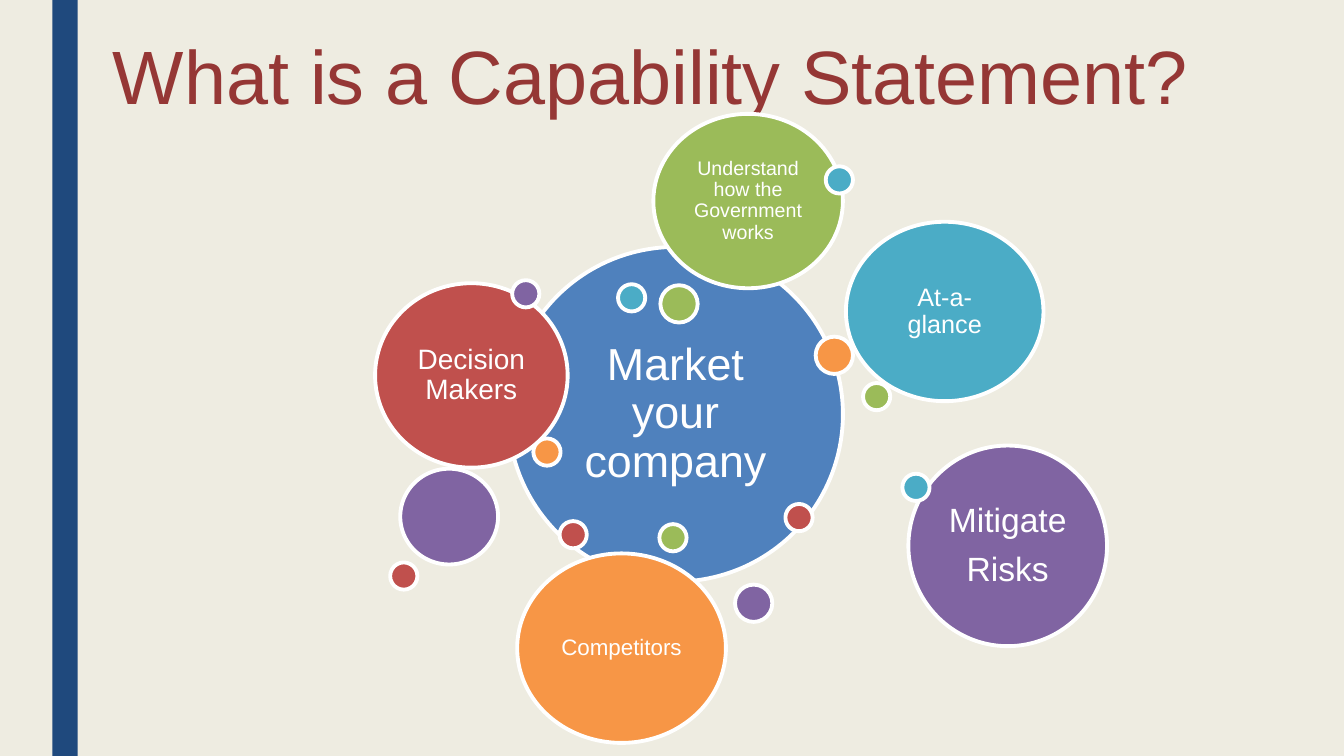
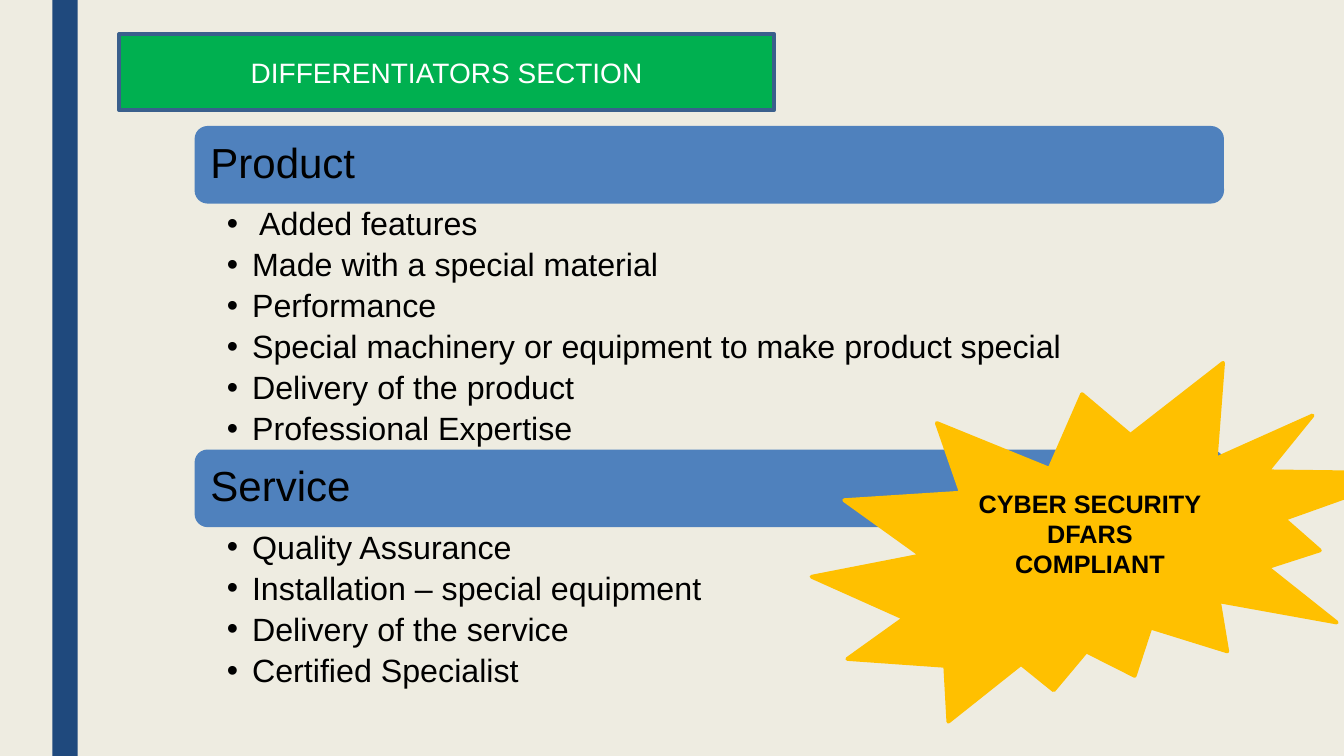
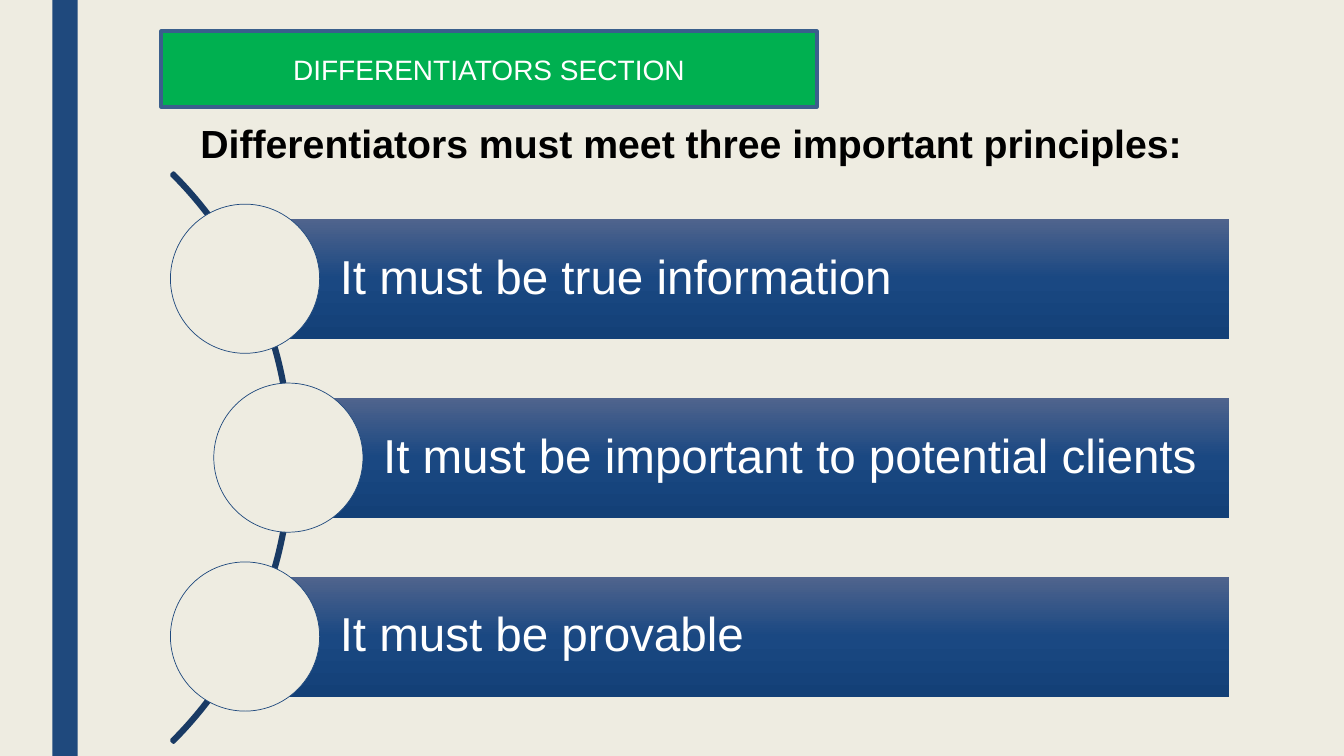
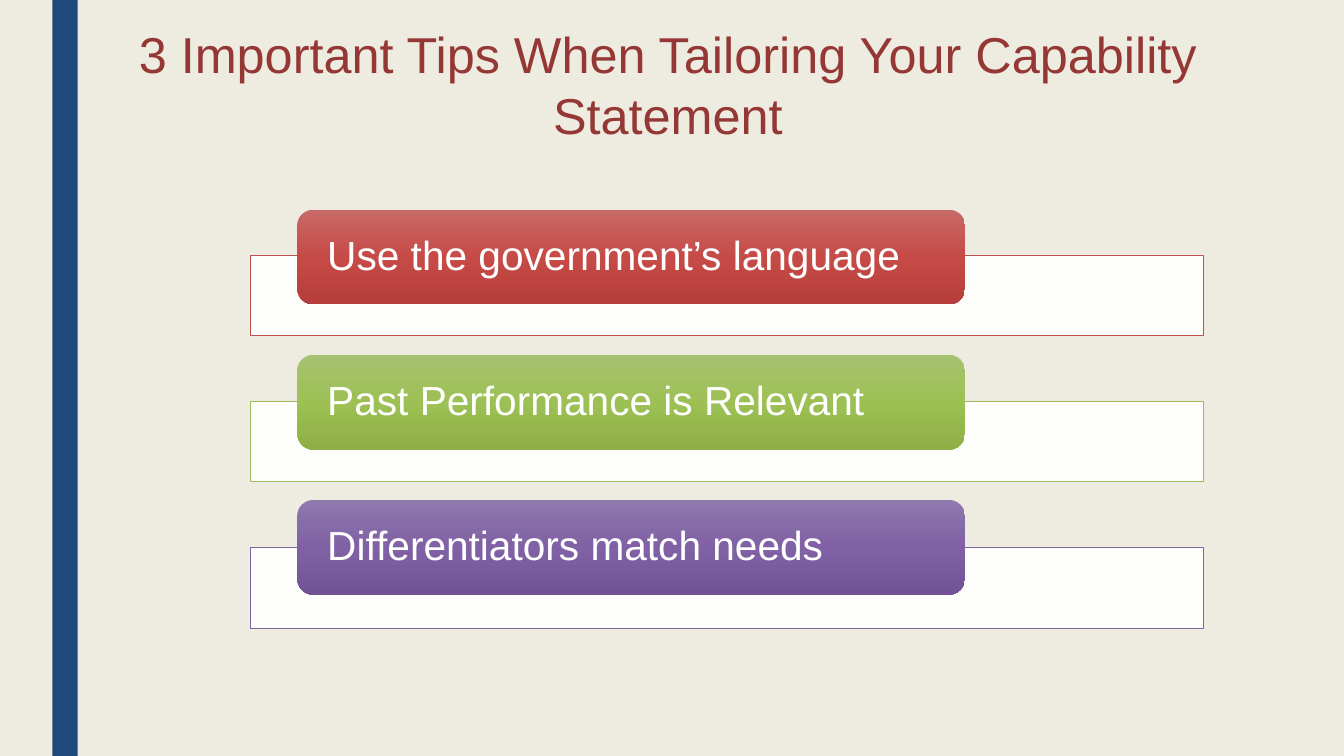
from dataclasses import dataclass
from typing import Any

import lxml.etree
import pptx
import pptx.dml.color
import pptx.enum.shapes
import pptx.enum.text
import pptx.oxml.ns
import pptx.util

Inches = pptx.util.Inches
Pt = pptx.util.Pt
Kind = pptx.enum.shapes.MSO_SHAPE
Align = pptx.enum.text.PP_ALIGN
Anchor = pptx.enum.text.MSO_ANCHOR
qn = pptx.oxml.ns.qn

FONT = "Arial"
PAPER, NAVY, WHITE, BLACK = "EEECE1", "1F497D", "FFFFFF", "000000"
BLUE, RED, GREEN = "4F81BD", "C0504D", "9BBB59"
PURPLE, AQUA, ORANGE = "8064A2", "4BACC6", "F79646"
MAROON, GOLD = "953735", "FFC000"
FADE = ("50648D", "1A4882", "134077")

Box = tuple[float, float, float, float]


@dataclass(frozen=True)
class Style:
    size: float
    color: str = WHITE
    bold: bool = False
    align: Any = Align.LEFT
    anchor: Any = Anchor.MIDDLE
    pads: Box = (0.1, 0.05, 0.1, 0.05)
    line: float = 1.0
    gap: float = 0
    bullet: bool = False
    wrap: bool = True


@dataclass(frozen=True)
class Ball:
    left: float
    top: float
    color: str
    wide: float = 0.27
    high: float = 0.27
    text: str = ""
    size: float = 0
    pad: float = 0


@dataclass(frozen=True)
class Part:
    top: float
    name: str
    high: float
    items: tuple[str, ...]


@dataclass(frozen=True)
class Tip:
    text: str
    edge: str
    fade: tuple[str, str, str]


BALLS = (
    Ball(5.04, 2.45, BLUE, 3.32, 3.32, "Market your company", 32, 0.13),
    Ball(5.55, 5.17, RED),
    Ball(8.56, 3.8, GREEN),
    Ball(7.29, 5.8, PURPLE, 0.37, 0.37),
    Ball(6.13, 2.82, AQUA),
    Ball(5.29, 4.35, ORANGE),
    Ball(3.72, 2.81, RED, 1.91, 1.83, "Decision Makers", 20, 0.08),
    Ball(6.55, 2.83, GREEN, 0.37, 0.37),
    Ball(3.97, 4.65, PURPLE, 0.97, 0.95),
    Ball(8.39, 2.2, AQUA, 1.96, 1.78, "At-a-glance", 18, 0.07),
    Ball(8.09, 3.34, ORANGE, 0.37, 0.37),
    Ball(3.87, 5.58, RED),
    Ball(6.54, 5.2, GREEN),
    Ball(9.01, 4.42, PURPLE, 1.97, 1.99, "Mitigate\nRisks", 24, 0.1),
    Ball(8.95, 4.7, AQUA),
    Ball(5.13, 5.49, ORANGE, 2.07, 1.88, "Competitors", 16, 0.07),
    Ball(7.79, 5, RED),
    Ball(6.48, 1.13, GREEN, 1.88, 1.73,
         "Understand how the Government works", 14, 0.06),
    Ball(5.08, 2.78, PURPLE),
    Ball(8.19, 1.65, AQUA),
)

PARTS = (
    Part(1.25, "Product", 2.44, (
        " Added features",
        "Made with a special material",
        "Performance",
        "Special machinery or equipment to make product special",
        "Delivery of the product",
        "Professional Expertise",
    )),
    Part(4.46, "Service", 1.63, (
        "Quality Assurance",
        "Installation – special equipment",
        "Delivery of the service",
        "Certified Specialist",
    )),
)

RULES = (
    (2.43, "It must be true information"),
    (2.86, "It must be important to potential clients"),
    (2.43, "It must be provable"),
)

TIPS = (
    Tip("Use the government’s language", RED, ("C86A68", "C64B47", "B53D3A")),
    Tip("Past Performance is Relevant", GREEN, ("A6C371", "9DC054", "8DAF46")),
    Tip("Differentiators match needs", PURPLE, ("8F79AD", "8061A5", "715395")),
)


def rgb(code: str) -> pptx.dml.color.RGBColor:
    return pptx.dml.color.RGBColor.from_string(code)


def apply(target: Any, **values: Any) -> None:
    for name, value in values.items():
        setattr(target, name, value)


def place(shape: Any, box: Box) -> None:
    left, top, width, height = map(Inches, box)
    apply(shape, left=left, top=top, width=width, height=height)


def paint(shape: Any, fill: str | None, edge: str | None = None,
          weight: float = 2.75) -> None:
    if fill:
        shape.fill.solid()
        shape.fill.fore_color.rgb = rgb(fill)
    else:
        shape.fill.background()
    if edge:
        shape.line.color.rgb = rgb(edge)
        shape.line.width = Pt(weight)
    else:
        shape.line.fill.background()


def blend(shape: Any, codes: tuple[str, ...]) -> None:
    shape.fill.gradient()
    shape.fill.gradient_angle = 270
    stops = shape.element.spPr.find(".//" + qn("a:gsLst"))
    stops.clear()
    for step, code in enumerate(codes):
        stop = lxml.etree.SubElement(stops, qn("a:gs"), pos=str(step * 50000))
        lxml.etree.SubElement(stop, qn("a:srgbClr"), val=code)


def veil(shape: Any, share: int) -> None:
    tone = shape.element.spPr.find(qn("a:solidFill")).find(qn("a:srgbClr"))
    lxml.etree.SubElement(tone, qn("a:alpha"), val=str(share * 1000))


def dot(para: Any) -> None:
    props = para._p.get_or_add_pPr()
    props.set("marL", str(Inches(0.25)))
    props.set("indent", str(Inches(-0.25)))
    lxml.etree.SubElement(props, qn("a:buFont"), typeface=FONT)
    lxml.etree.SubElement(props, qn("a:buChar"), char="•")


def write(shape: Any, text: str, style: Style) -> None:
    frame = shape.text_frame
    left, top, right, bottom = map(Inches, style.pads)
    apply(frame, word_wrap=style.wrap, vertical_anchor=style.anchor,
          auto_size=pptx.enum.text.MSO_AUTO_SIZE.NONE,
          margin_left=left, margin_top=top,
          margin_right=right, margin_bottom=bottom)
    lines = text.split("\n")
    for count, words in enumerate(lines, 1):
        para = frame.paragraphs[0] if count == 1 else frame.add_paragraph()
        if style.bullet:
            dot(para)
        after = style.gap if count < len(lines) else 0
        apply(para, alignment=style.align, line_spacing=style.line,
              space_after=Pt(after))
        run = para.add_run()
        run.text = words
        apply(run.font, name=FONT, size=Pt(style.size), bold=style.bold)
        run.font.color.rgb = rgb(style.color)


def draw(slide: Any, kind: Any, box: Box, fill: str | None,
         edge: str | None = None, weight: float = 2.75) -> Any:
    shape = slide.shapes.add_shape(kind, *map(Inches, box))
    shape.shadow.inherit = False
    paint(shape, fill, edge, weight)
    return shape


def label(slide: Any, box: Box, text: str, style: Style) -> None:
    write(slide.shapes.add_textbox(*map(Inches, box)), text, style)


def head(slide: Any, box: Box, text: str, size: float,
         wrap: bool = True) -> None:
    title = slide.shapes.title
    place(title, box)
    write(title, text, Style(size, MAROON, align=Align.CENTER, line=1.02,
                             wrap=wrap))


def banner(slide: Any, left: float, top: float) -> None:
    title = slide.shapes.title
    place(title, (left, top, 6.5, 0.75))
    paint(title, "00B050", "3A5F8C")
    write(title, "DIFFERENTIATORS SECTION", Style(20, align=Align.CENTER))


def bubbles(slide: Any) -> None:
    head(slide, (0.97, 0.22, 10.97, 1.01), "What is a Capability Statement?",
         54, False)
    for ball in BALLS:
        box = (ball.left, ball.top, ball.wide, ball.high)
        shape = draw(slide, Kind.OVAL, box, ball.color, WHITE)
        if ball.text:
            write(shape, ball.text, Style(
                ball.size, align=Align.CENTER, pads=(ball.pad,) * 4,
                line=0.9, gap=8.8))


def lists(slide: Any) -> None:
    banner(slide, 1.18, 0.34)
    left, width, bar = 1.93, 10.21, 0.77
    name = Style(30, BLACK, pads=(0.12,) * 4, line=0.9)
    body = Style(23, BLACK, anchor=Anchor.TOP, pads=(0.32, 0.04, 0.23, 0.04),
                 line=0.9, gap=4.5, bullet=True)
    for part in PARTS:
        shape = draw(slide, Kind.ROUNDED_RECTANGLE,
                     (left, part.top, width, bar), BLUE)
        write(shape, part.name, name)
        label(slide, (left, part.top + bar, width, part.high),
              "\n".join(part.items), body)
    burst = draw(slide, Kind.EXPLOSION2, (8.05, 3.6, 5.96, 3.56), GOLD, GOLD)
    write(burst, "CYBER SECURITY\nDFARS COMPLIANT", Style(
        18, BLACK, True, Align.CENTER, pads=(0.1, 0.05, 0.1, 0.34)))


def rules(slide: Any) -> None:
    banner(slide, 1.6, 0.31)
    arc = draw(slide, Kind.BLOCK_ARC, (-5.09, 0.55, 7.98, 7.98), None, "193A64")
    for index, value in enumerate((189, 27, 0.003)):
        arc.adjustments[index] = value
    right, high, disc = 12.19, 1.19, 1.48
    style = Style(34, pads=(0.94, 0.09, 0.09, 0.09), line=0.9)
    for row, (left, text) in enumerate(RULES):
        top = 2.17 + row * 1.775
        bar = draw(slide, Kind.RECTANGLE, (left, top, right - left, high), NAVY)
        blend(bar, FADE)
        write(bar, text, style)
        draw(slide, Kind.OVAL,
             (left - disc / 2, top + (high - disc) / 2, disc, disc),
             PAPER, NAVY, 0.5)
    label(slide, (1.89, 1.13, 10.07, 0.57),
          "Differentiators must meet three important principles:",
          Style(28, BLACK, True, anchor=Anchor.TOP))


def tips(slide: Any) -> None:
    head(slide, (0.75, 0.17, 11.75, 1.31),
         "3 Important Tips When Tailoring Your Capability Statement", 36)
    style = Style(29, pads=(0.25, 0, 0.25, 0), line=0.9)
    for row, tip in enumerate(TIPS):
        panel = draw(slide, Kind.RECTANGLE, (2.48, 2.53 + row * 1.45, 9.46, 0.8),
                     WHITE, tip.edge, 0.5)
        veil(panel, 90)
        tab = draw(slide, Kind.ROUNDED_RECTANGLE,
                   (2.95, 2.08 + row * 1.44, 6.62, 0.94), tip.edge)
        blend(tab, tip.fade)
        write(tab, tip.text, style)


def main() -> None:
    deck = pptx.Presentation()
    apply(deck, slide_width=Inches(13.33), slide_height=Inches(7.5))
    ground = deck.slide_master.background.fill
    ground.solid()
    ground.fore_color.rgb = rgb(PAPER)
    layout = deck.slide_layouts.get_by_name("Title Only")
    slides = [deck.slides.add_slide(layout) for _ in range(4)]
    band = draw(slides[0], Kind.RECTANGLE, (0.52, 0, 0.25, 7.5), NAVY)
    layout.shapes.element.insert(2, band.element)
    for build, slide in zip((bubbles, lists, rules, tips), slides):
        build(slide)
    deck.save("out.pptx")


if __name__ == "__main__":
    main()
